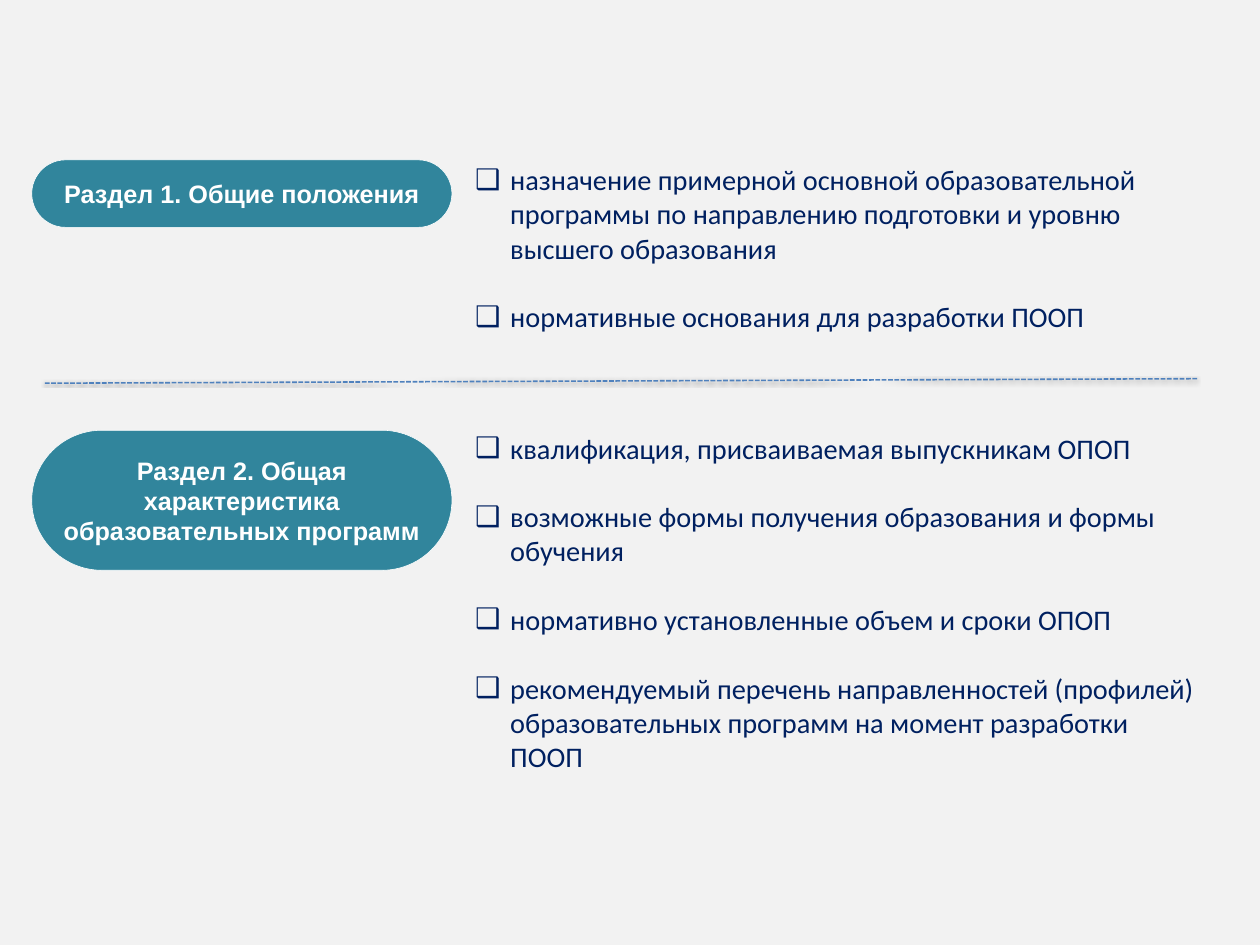
from lxml import etree
from pptx import Presentation
from pptx.dml.color import RGBColor
from pptx.enum.dml import MSO_LINE
from pptx.enum.shapes import MSO_CONNECTOR, MSO_SHAPE
from pptx.enum.text import MSO_ANCHOR, MSO_AUTO_SIZE, PP_ALIGN
from pptx.oxml.ns import qn
from pptx.util import Inches, Pt

PILL = MSO_SHAPE.ROUNDED_RECTANGLE
STRAIGHT = MSO_CONNECTOR.STRAIGHT
MIDDLE, TOP = MSO_ANCHOR.MIDDLE, MSO_ANCHOR.TOP
CENTER, LEFT = PP_ALIGN.CENTER, PP_ALIGN.LEFT
GROW = MSO_AUTO_SIZE.SHAPE_TO_FIT_TEXT
DASH = MSO_LINE.SQUARE_DOT

COLORS = {"page": "F2F2F2", "pill": "31859C", "white": "FFFFFF",
          "body": "002060", "rule": "4F81BD", "shadow": "000000"}

SECTIONS = [
    {"title": "Раздел 1. Общие положения",
     "pill": (2.82, 1.19), "list": (2.82, 3.13),
     "items": ["назначение примерной основной образовательной программы "
               "по направлению подготовки и уровню высшего образования",
               "нормативные основания для разработки ПООП"]},
    {"title": "Раздел 2. Общая характеристика образовательных программ",
     "pill": (7.59, 2.47), "list": (7.55, 6.16),
     "items": ["квалификация, присваиваемая выпускникам ОПОП",
               "возможные формы получения образования и формы обучения",
               "нормативно установленные объем и сроки ОПОП",
               "рекомендуемый перечень направленностей (профилей) "
               "образовательных программ на момент разработки ПООП"]},
]

SLIDE_W, SLIDE_H = 22.22, 16.67
PILL_X, PILL_W = 0.56, 7.41
LIST_X, LIST_W = 8.28, 13.07
INDENT = 0.62
RULE = (0.79, 6.76, 21.12, 6.68)


def color(name):
    return RGBColor.from_string(COLORS[name])


def add_bullet(para):
    props = para._p.get_or_add_pPr()
    props.set("marL", str(Inches(INDENT)))
    props.set("indent", str(-Inches(INDENT)))
    etree.SubElement(props, qn("a:buFont")).set("typeface", "Arial")
    etree.SubElement(props, qn("a:buChar")).set("char", "❑")


def write(box, lines, font, size, ink, bold=False, align=LEFT, anchor=TOP,
          bullets=False, gap=0):
    frame = box.text_frame
    frame.word_wrap = True
    frame.vertical_anchor = anchor
    for number, line in enumerate(lines):
        para = frame.paragraphs[0] if number == 0 else frame.add_paragraph()
        if bullets:
            add_bullet(para)
        para.alignment = align
        if number:
            para.space_before = Pt(gap)
        span = para.add_run()
        span.text = line
        span.font.name = font
        span.font.size = Pt(size)
        span.font.bold = bold
        span.font.color.rgb = color(ink)


def add_pill(page, title, top, height):
    pill = page.shapes.add_shape(PILL, Inches(PILL_X), Inches(top),
                                 Inches(PILL_W), Inches(height))
    pill.adjustments[0] = 0.5
    pill.shadow.inherit = False
    pill.fill.solid()
    pill.fill.fore_color.rgb = color("pill")
    pill.line.color.rgb = color("white")
    pill.line.width = Pt(0.75)
    write(pill, [title], "Arial", 32, "white", bold=True,
          align=CENTER, anchor=MIDDLE)


def add_list(page, items, top, height):
    box = page.shapes.add_textbox(Inches(LIST_X), Inches(top),
                                  Inches(LIST_W), Inches(height))
    write(box, items, "Calibri", 36, "body", bullets=True, gap=44)
    box.text_frame.auto_size = GROW


def add_rule(page):
    rule = page.shapes.add_connector(STRAIGHT, *map(Inches, RULE))
    rule.line.color.rgb = color("rule")
    rule.line.width = Pt(2)
    rule.line.dash_style = DASH
    effects = etree.SubElement(rule._element.spPr, qn("a:effectLst"))
    shadow = etree.SubElement(effects, qn("a:outerShdw"), blurRad=str(Pt(3.1)),
                              dist=str(Pt(1.6)), dir="5400000", rotWithShape="0")
    tint = etree.SubElement(shadow, qn("a:srgbClr"), val=COLORS["shadow"])
    etree.SubElement(tint, qn("a:alpha"), val="38000")


def main():
    deck = Presentation()
    deck.slide_width, deck.slide_height = Inches(SLIDE_W), Inches(SLIDE_H)
    page = deck.slides.add_slide(deck.slide_layouts[6])
    page.background.fill.solid()
    page.background.fill.fore_color.rgb = color("page")
    for section in SECTIONS:
        add_pill(page, section["title"], *section["pill"])
        add_list(page, section["items"], *section["list"])
    add_rule(page)
    deck.save("out.pptx")


if __name__ == "__main__":
    main()
